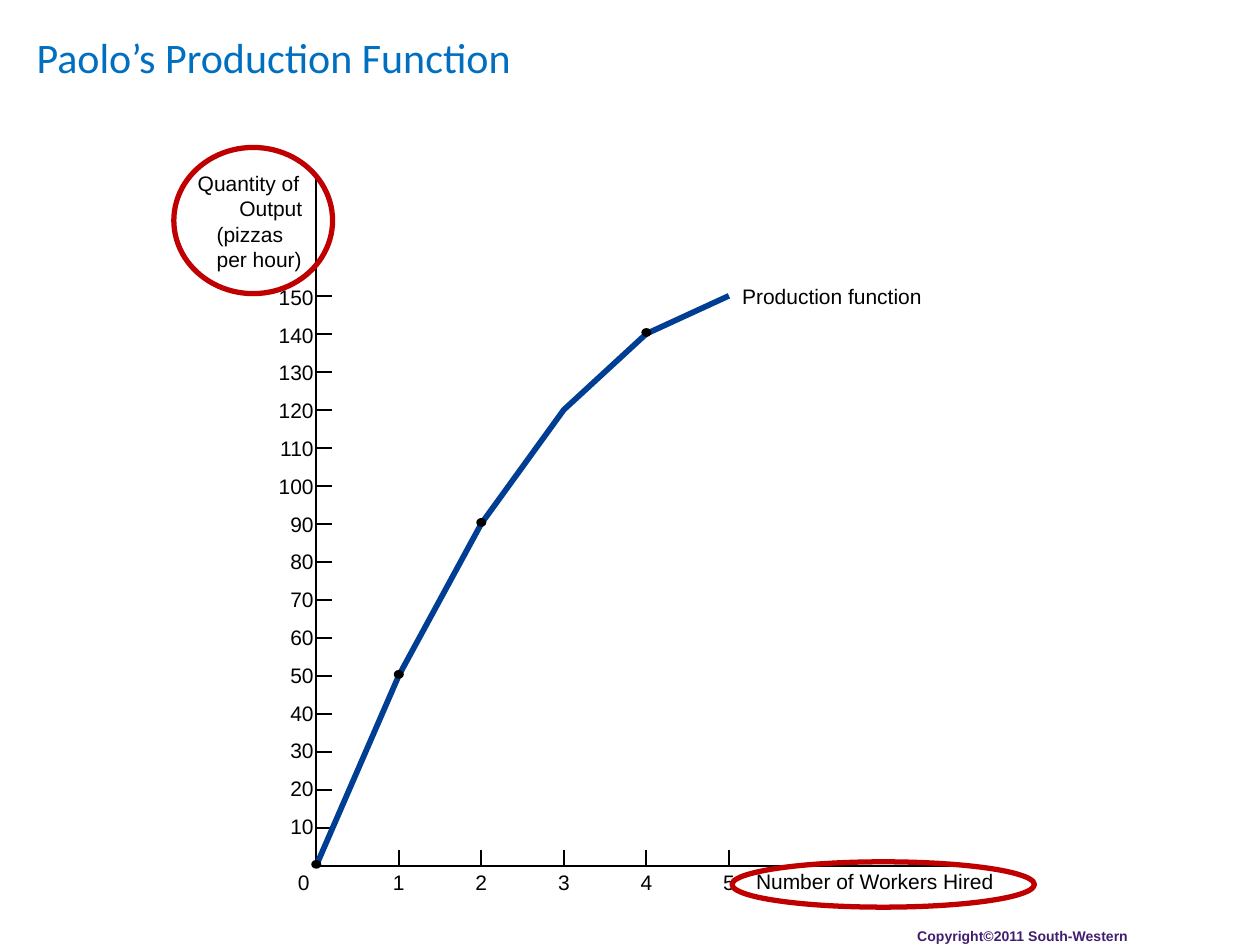
from lxml import etree
from pptx import Presentation
from pptx.dml.color import RGBColor
from pptx.enum.shapes import MSO_CONNECTOR, MSO_SHAPE
from pptx.enum.text import PP_ALIGN
from pptx.oxml.ns import qn
from pptx.util import Inches, Pt

STRAIGHT = MSO_CONNECTOR.STRAIGHT
OVAL = MSO_SHAPE.OVAL
LEFT, CENTER, RIGHT = PP_ALIGN.LEFT, PP_ALIGN.CENTER, PP_ALIGN.RIGHT
COLORS = {
    "ink": "000000",
    "curve": "003E94",
    "ring": "C00000",
    "title": "006FC0",
    "copyright": "411D71",
}

deck = Presentation()
deck.slide_width, deck.slide_height = Inches(10), Inches(7.5)
page = deck.slides.add_slide(deck.slide_layouts[6])

# Positions are percentages of the slide's width and height.
ACROSS, DOWN = deck.slide_width / 100, deck.slide_height / 100
ORIGIN_X, ORIGIN_Y = 25.1, 91.6
COLUMN, ROW = 6.55, 4.02
TICK_X, TICK_Y = 1.25, 1.67
AXIS_TOP, AXIS_RIGHT = 18.27, 77.7
output_by_workers = [0, 50, 90, 120, 140, 150]
marked_workers = [0, 1, 2, 4]
points = [
    (ORIGIN_X + workers * COLUMN, ORIGIN_Y - output / 10 * ROW)
    for workers, output in enumerate(output_by_workers)
]


def add_line(x1, y1, x2, y2):
    line = page.shapes.add_connector(
        STRAIGHT, round(x1 * ACROSS), round(y1 * DOWN),
        round(x2 * ACROSS), round(y2 * DOWN))
    line.line.color.rgb = RGBColor.from_string(COLORS["ink"])
    line.line.width = Pt(1.12)
    etree.SubElement(line._element.spPr, qn("a:effectLst"))


def add_text(lines, x, y, width, height, color="ink", size=12,
             font="Arial", bold=False, align=LEFT):
    box = page.shapes.add_textbox(
        round(x * ACROSS), round(y * DOWN),
        round(width * ACROSS), round(height * DOWN))
    frame = box.text_frame
    frame.word_wrap = True
    frame.margin_left = frame.margin_right = frame.margin_bottom = 0
    frame.margin_top = Inches(0.02)
    frame.text = "\n".join(lines)
    for para in frame.paragraphs:
        para.alignment = align
        for span in para.runs:
            span.font.name, span.font.size = font, Pt(size)
            span.font.bold = bold
            span.font.color.rgb = RGBColor.from_string(COLORS[color])
    return frame


add_line(ORIGIN_X, AXIS_TOP, ORIGIN_X, ORIGIN_Y)
add_line(ORIGIN_X, ORIGIN_Y, AXIS_RIGHT, ORIGIN_Y)
for step in range(1, 16):
    tick_y = ORIGIN_Y - step * ROW
    add_line(ORIGIN_X, tick_y, ORIGIN_X + TICK_X, tick_y)
for workers in range(1, 6):
    tick_x = ORIGIN_X + workers * COLUMN
    add_line(tick_x, ORIGIN_Y - TICK_Y, tick_x, ORIGIN_Y)

corners = [(round(x * ACROSS), round(y * DOWN)) for x, y in points]
builder = page.shapes.build_freeform(*corners[0])
builder.add_line_segments(corners[1:], close=False)
curve = builder.convert_to_shape()
curve.shadow.inherit = False
curve.fill.background()
curve.line.color.rgb = RGBColor.from_string(COLORS["curve"])
curve.line.width = Pt(3.25)

for workers in marked_workers:
    x, y = points[workers]
    dot = page.shapes.add_shape(
        OVAL, round((x - 0.4) * ACROSS), round((y - 0.6) * DOWN),
        round(0.8 * ACROSS), round(0.93 * DOWN))
    dot.shadow.inherit = False
    dot.fill.solid()
    dot.fill.fore_color.rgb = RGBColor.from_string(COLORS["ink"])
    dot.line.fill.background()

output_labels = [str(output) for output in range(150, 0, -10)]
output_axis = add_text(
    ["Quantity of", "Output (pizzas per hour)", *output_labels],
    15.6, 17.73, 9.3, 71.07, align=RIGHT)
heading, unit, *tick_paras = output_axis.paragraphs
heading.alignment = unit.alignment = LEFT
heading_props = heading._p.get_or_add_pPr()
heading_props.set("marL", str(Inches(0.01)))
unit_props = unit._p.get_or_add_pPr()
unit_props.set("marL", str(Inches(0.16)))
unit_props.set("indent", str(Inches(0.18)))
for para in output_axis.paragraphs:
    para.line_spacing = Pt(14.5)
for para in tick_paras:
    para.space_before = Pt(7.1)

add_text(["Number of Workers Hired"], 60, 91.6, 19.5, 3.07)
add_text(["0"], 23.5, 91.73, 1.2, 3.07, align=CENTER)
for workers in range(1, 6):
    add_text([str(workers)], ORIGIN_X + workers * COLUMN - 0.6, 91.73,
             1.2, 3.07, align=CENTER)
add_text(["Production function"], 58.9, 29.73, 15, 3.07)
add_text(["Copyright©2011 South-Western"], 72.8, 97.87, 18, 2.13,
         color="copyright", size=8, bold=True)

for x, y, width, height in [(58.1, 91.2, 24, 4.8), (13.8, 15.6, 12.6, 15.47)]:
    ring = page.shapes.add_shape(
        OVAL, round(x * ACROSS), round(y * DOWN),
        round(width * ACROSS), round(height * DOWN))
    ring.shadow.inherit = False
    ring.fill.background()
    ring.line.color.rgb = RGBColor.from_string(COLORS["ring"])
    ring.line.width = Pt(3)

add_text(["Paolo’s Production Function"], 2.9, 3.07, 62.9, 9.6,
         color="title", size=24, font="Calibri")

deck.save("out.pptx")
